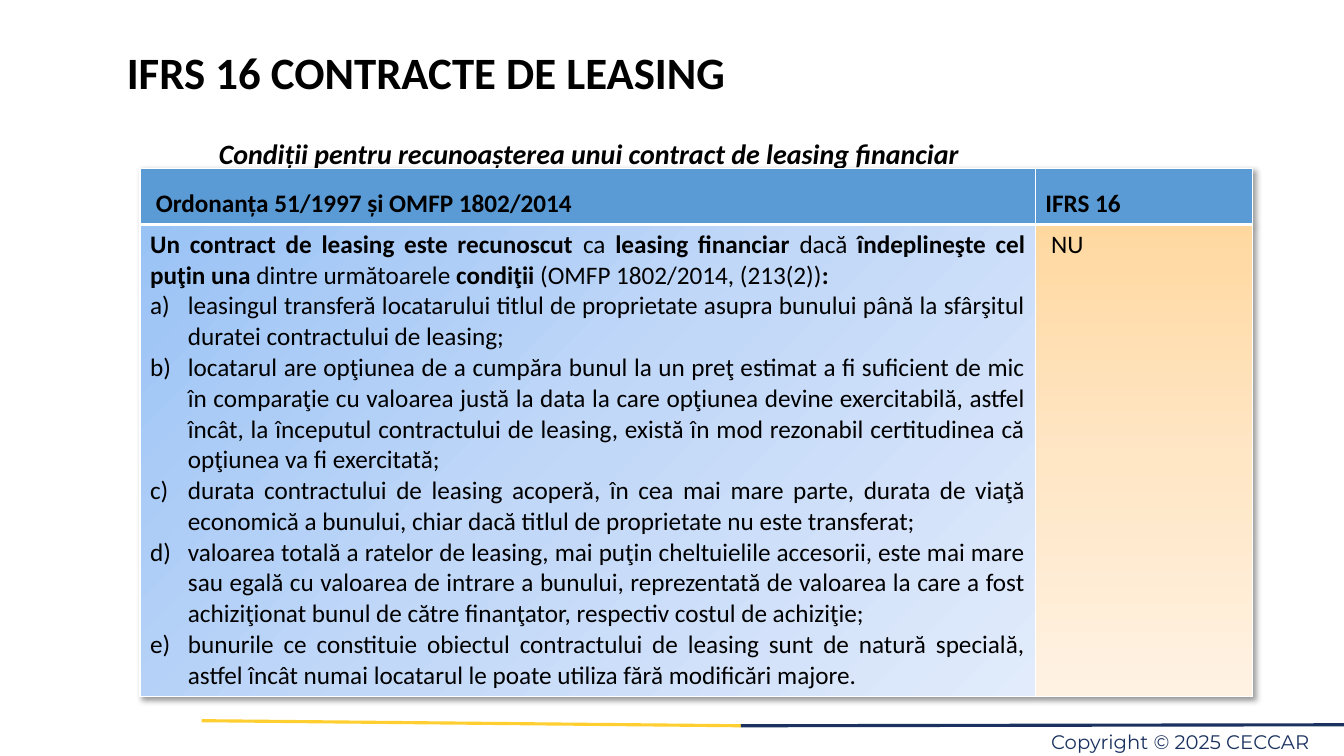
from lxml import etree
from pptx import Presentation
from pptx.dml.color import RGBColor
from pptx.enum.shapes import MSO_CONNECTOR
from pptx.enum.text import PP_ALIGN
from pptx.oxml import parse_xml
from pptx.oxml.ns import nsdecls, qn
from pptx.util import Pt

NAVY, YELLOW, BLACK, WHITE, HEADER_BLUE = "1B3260", "FFCE31", "000000", "FFFFFF", "5B9BD5"
BLUE_FADE = ("9AC3F5", "C2D8F8", "E1EBFB")
ORANGE_FADE = ("FFD8A0", "FFE6C5", "FFF2E3")
LIST_INDENT = 27

INTRO = [
    ("Un contract de leasing este recunoscut ", True),
    ("ca ", False),
    ("leasing financiar ", True),
    ("dacă ", False),
    ("îndeplineşte cel puţin una ", True),
    ("dintre următoarele ", False),
    ("condiţii ", True),
    ("(OMFP 1802/2014, (213(2))", False),
    (":", True),
]
CONDITIONS = [
    "leasingul transferă locatarului titlul de proprietate asupra bunului până la sfârşitul "
    "duratei contractului de leasing;",
    "locatarul are opţiunea de a cumpăra bunul la un preţ estimat a fi suficient de mic în "
    "comparaţie cu valoarea justă la data la care opţiunea devine exercitabilă, astfel încât, "
    "la începutul contractului de leasing, există în mod rezonabil certitudinea că opţiunea "
    "va fi exercitată;",
    "durata contractului de leasing acoperă, în cea mai mare parte, durata de viaţă economică "
    "a bunului, chiar dacă titlul de proprietate nu este transferat;",
    "valoarea totală a ratelor de leasing, mai puţin cheltuielile accesorii, este mai mare sau "
    "egală cu valoarea de intrare a bunului, reprezentată de valoarea la care a fost "
    "achiziţionat bunul de către finanţator, respectiv costul de achiziţie;",
    "bunurile ce constituie obiectul contractului de leasing sunt de natură specială, astfel "
    "încât numai locatarul le poate utiliza fără modificări majore.",
]


def color(value):
    return RGBColor.from_string(value)


def add_span(para, text, size=18, font="Calibri", fill=BLACK, bold=False, italic=False):
    span = para.add_run()
    span.text = text
    span.font.size = Pt(size)
    span.font.name = font
    span.font.color.rgb = color(fill)
    span.font.bold = bold
    span.font.italic = italic


def format_paragraph(para, align=PP_ALIGN.JUSTIFY, spacing=1.0):
    para.alignment = align
    para.line_spacing = spacing
    return para


def add_text_box(page, left, top, width, height, align, spacing, margins=True):
    """Add a text box and return its first paragraph."""
    box = page.shapes.add_textbox(Pt(left), Pt(top), Pt(width), Pt(height))
    frame = box.text_frame
    frame.word_wrap = True
    if not margins:
        frame.margin_left = frame.margin_top = frame.margin_right = frame.margin_bottom = 0
    return format_paragraph(frame.paragraphs[0], align, spacing)


def add_line(page, start, end, stroke):
    line = page.shapes.add_connector(MSO_CONNECTOR.STRAIGHT, *map(Pt, start + end))
    line.line.color.rgb = color(stroke)
    line.line.width = Pt(2.25)
    etree.SubElement(line._element.spPr, qn("a:effectLst"))


def set_borders(cell, top=1, bottom=1):
    properties = cell._tc.get_or_add_tcPr()
    for side, width in (("L", 1), ("R", 1), ("T", top), ("B", bottom)):
        properties.append(parse_xml(
            f'<a:ln{side} {nsdecls("a")} w="{Pt(width)}"><a:solidFill>'
            f'<a:srgbClr val="{WHITE}"/></a:solidFill></a:ln{side}>'))


def set_gradient(cell, stops, angle):
    """Fill a cell with evenly spaced stops; the angle runs clockwise."""
    step = 100000 // (len(stops) - 1)
    marks = "".join(f'<a:gs pos="{index * step}"><a:srgbClr val="{stop}"/></a:gs>'
                    for index, stop in enumerate(stops))
    cell._tc.get_or_add_tcPr().append(parse_xml(
        f'<a:gradFill {nsdecls("a")} rotWithShape="1"><a:gsLst>{marks}</a:gsLst>'
        f'<a:lin ang="{angle * 60000}" scaled="0"/></a:gradFill>'))


def set_lettered(para):
    properties = para._p.get_or_add_pPr()
    properties.set("marL", str(Pt(LIST_INDENT)))
    properties.set("indent", str(-Pt(LIST_INDENT)))
    etree.SubElement(properties, qn("a:buFont"), typeface="+mj-lt")
    etree.SubElement(properties, qn("a:buAutoNum"), type="alphaLcParenR")


def add_table_shadow(table):
    table._tbl.tblPr.insert(0, parse_xml(
        f'<a:effectLst {nsdecls("a")}><a:outerShdw blurRad="{Pt(4)}" dist="{Pt(3)}" '
        'dir="2700000" algn="tl" rotWithShape="0"><a:srgbClr val="000000">'
        '<a:alpha val="40000"/></a:srgbClr></a:outerShdw></a:effectLst>'))


def add_comparison_table(page):
    widths, heights = (639.5, 155), (40, 337)
    table = page.shapes.add_table(2, 2, Pt(100), Pt(120.3), Pt(sum(widths)),
                                  Pt(sum(heights))).table
    table.horz_banding = False
    add_table_shadow(table)
    for column, width in zip(table.columns, widths):
        column.width = Pt(width)
    for row, height in zip(table.rows, heights):
        row.height = Pt(height)

    for index, heading in enumerate((" Ordonanța 51/1997 și OMFP 1802/2014", "IFRS 16")):
        cell = table.cell(0, index)
        set_borders(cell, bottom=3)
        cell.fill.solid()
        cell.fill.fore_color.rgb = color(HEADER_BLUE)
        add_span(format_paragraph(cell.text_frame.paragraphs[0], spacing=1.5), heading, bold=True)

    rules, answer = table.cell(1, 0), table.cell(1, 1)
    for cell, stops, angle in ((rules, BLUE_FADE, 45), (answer, ORANGE_FADE, 90)):
        set_borders(cell, top=3)
        set_gradient(cell, stops, angle)
    intro = format_paragraph(rules.text_frame.paragraphs[0])
    for text, bold in INTRO:
        add_span(intro, text, bold=bold)
    for condition in CONDITIONS:
        para = format_paragraph(rules.text_frame.add_paragraph())
        set_lettered(para)
        add_span(para, condition)
    add_span(format_paragraph(answer.text_frame.paragraphs[0]), " NU")


def main():
    deck = Presentation()
    deck.slide_width, deck.slide_height = Pt(960), Pt(540)
    page = deck.slides.add_slide(deck.slide_layouts[6])

    add_line(page, (144, 514.8), (529.2, 518.4), YELLOW)
    add_line(page, (529.2, 518.4), (960, 517.7), NAVY)
    footer = add_text_box(page, 656, 517.7, 283, 19.5, PP_ALIGN.RIGHT, Pt(20.5), margins=False)
    add_span(footer, "Copyright © 2025 CECCAR ", 14, "Montserrat", NAVY)

    subtitle = add_text_box(page, 143.3, 72.7, 630, 46, PP_ALIGN.JUSTIFY, 1.5)
    add_span(subtitle, " ", 26, bold=True, italic=True)
    add_span(subtitle, "Condiții pentru recunoașterea unui contract de leasing financiar", 20,
             bold=True, italic=True)
    title = add_text_box(page, 0, 32.4, 609, 64, PP_ALIGN.CENTER, 0.9)
    add_span(title, "IFRS 16 CONTRACTE DE LEASING", 32, bold=True)

    add_comparison_table(page)
    deck.save("out.pptx")


if __name__ == "__main__":
    main()
